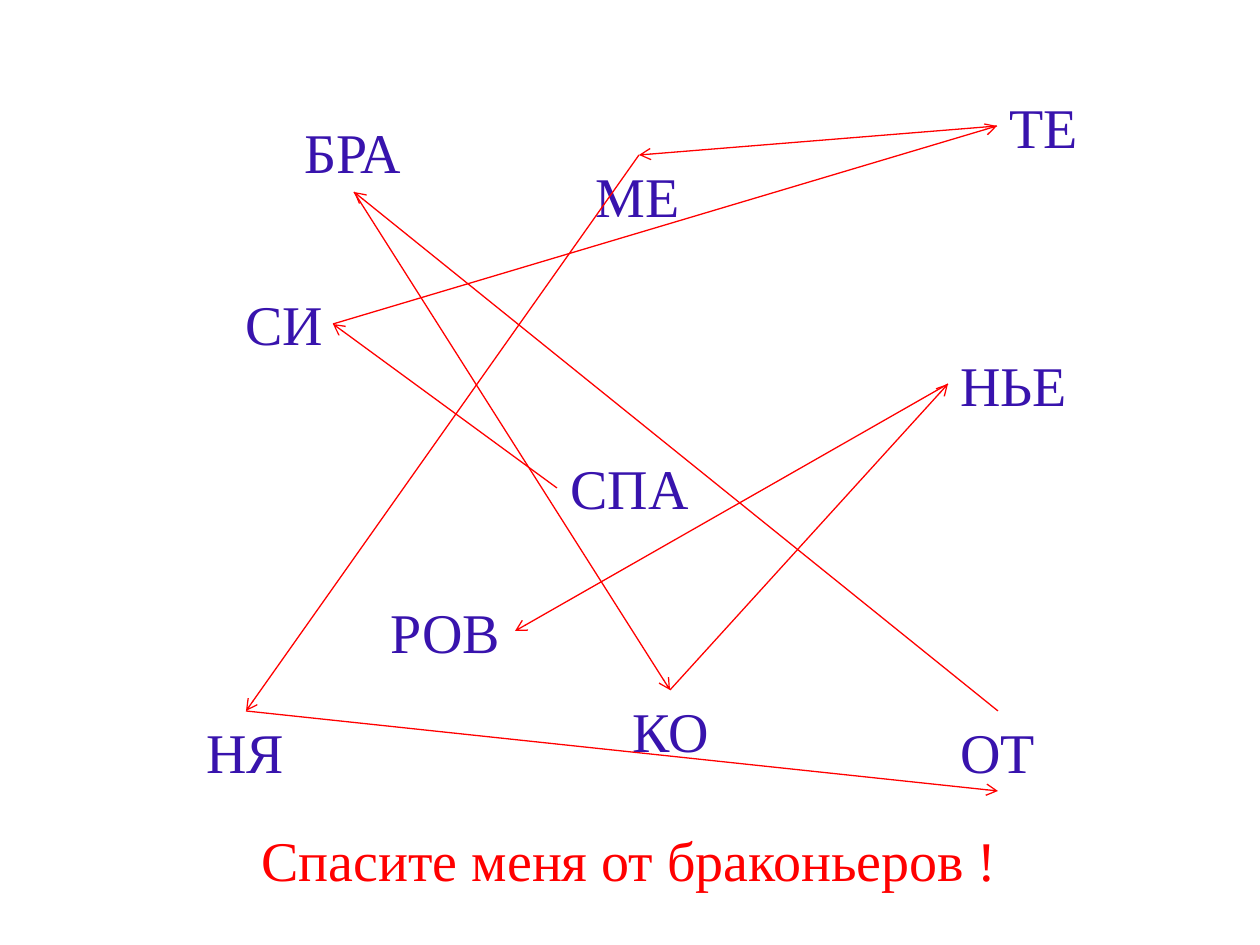
from itertools import pairwise

from lxml import etree
from pptx import Presentation
from pptx.dml.color import RGBColor
from pptx.enum.shapes import MSO_CONNECTOR, MSO_SHAPE
from pptx.enum.text import MSO_AUTO_SIZE, PP_ALIGN
from pptx.oxml.ns import qn
from pptx.util import Pt

STRAIGHT = MSO_CONNECTOR.STRAIGHT
ROUNDED = MSO_SHAPE.ROUNDED_RECTANGLE
LEFT, CENTER = PP_ALIGN.LEFT, PP_ALIGN.CENTER
GROW = MSO_AUTO_SIZE.SHAPE_TO_FIT_TEXT

COLORS = {"panel": "FFFFFF", "syllable": "3813AD", "answer": "FF0000"}
FONT = "Times New Roman"
TEXT_HEIGHT = 81


def px(value):
    return round(value * 914400 / 126)


def add_text(words, left, top, width, color, align=LEFT, wrap=False):
    box = slide.shapes.add_textbox(px(left), px(top), px(width), px(TEXT_HEIGHT))
    frame = box.text_frame
    frame.text = words
    frame.word_wrap = wrap
    frame.auto_size = GROW
    paragraph = frame.paragraphs[0]
    paragraph.alignment = align
    font = paragraph.runs[0].font
    font.name, font.size = FONT, Pt(32)
    font.color.rgb = RGBColor.from_string(COLORS[color])


prs = Presentation()
prs.slide_width, prs.slide_height = px(1260), px(945)
slide = prs.slides.add_slide(prs.slide_layouts[6])

# White rounded panel
panel = slide.shapes.add_shape(ROUNDED, px(13), px(14), px(1235), px(919))
panel.adjustments[0] = 0.02
panel.shadow.inherit = False
panel.fill.solid()
panel.fill.fore_color.rgb = RGBColor.from_string(COLORS["panel"])
panel.line.fill.background()

# Scattered syllables: text, left, top, width
syllables = [
    ("СПА", 557, 447, 145),
    ("СИ", 233, 283, 121),
    ("ТЕ", 997, 86, 94),
    ("МЕ", 583, 155, 111),
    ("НЯ", 194, 711, 105),
    ("ОТ", 948, 711, 101),
    ("БРА", 292, 111, 123),
    ("КО", 620, 690, 102),
    ("НЬЕ", 948, 344, 134),
    ("РОВ", 378, 591, 136),
]
for syllable, left, top, width in syllables:
    add_text(syllable, left, top, width, "syllable",
             CENTER if syllable == "СПА" else LEFT, wrap=syllable == "СИ")

# Sentence the syllables spell
add_text("Спасите меня от браконьеров !", 79, 819, 1101, "answer", CENTER, wrap=True)

# Arrows in reading order; the trail enters ОТ below and leaves it above
trails = [
    [(557, 488), (333, 324), (997, 126), (639, 155), (246, 711), (998, 791)],
    [(998, 711), (354, 192), (670, 690), (948, 384), (515, 631)],
]
for trail in trails:
    for (x1, y1), (x2, y2) in pairwise(trail):
        arrow = slide.shapes.add_connector(STRAIGHT, px(x1), px(y1), px(x2), px(y2))
        arrow.line.color.rgb = RGBColor.from_string(COLORS["answer"])
        arrow.line.width = Pt(0.75)
        etree.SubElement(arrow.line._get_or_add_ln(), qn("a:tailEnd"), type="arrow")
        etree.SubElement(arrow._element.spPr, qn("a:effectLst"))

prs.save("out.pptx")
